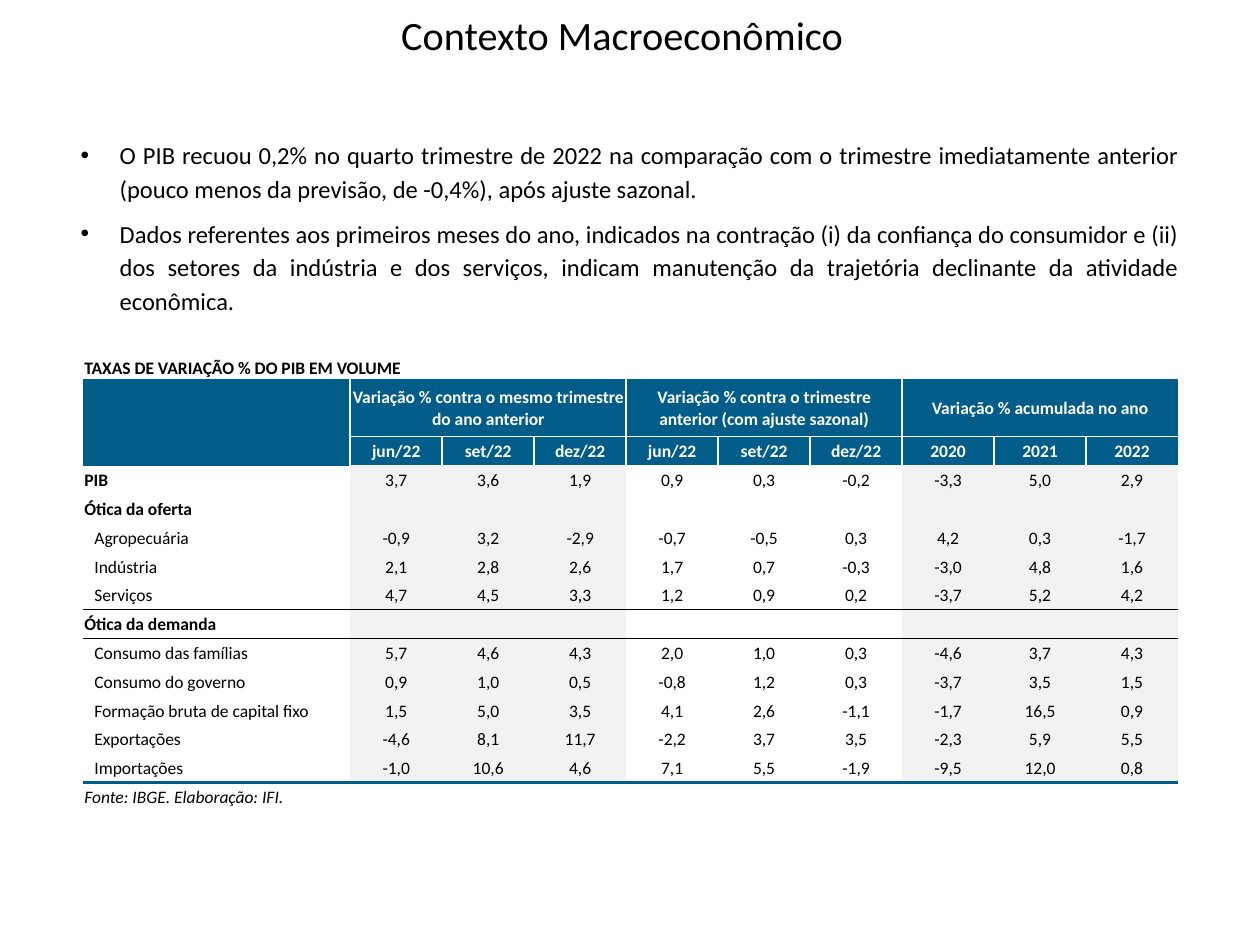
from dataclasses import dataclass

from lxml.etree import SubElement
from pptx import Presentation
from pptx.dml.color import RGBColor
from pptx.enum.text import MSO_ANCHOR, MSO_AUTO_SIZE, PP_ALIGN
from pptx.oxml.ns import qn
from pptx.util import Inches, Pt


@dataclass(frozen=True)
class Theme:
    font: str = "Calibri"
    black: str = "000000"
    white: str = "FFFFFF"
    blue: str = "005D89"
    gray: str = "F2F2F2"
    title_size: float = 23
    body_size: float = 14
    table_size: float = 10


THEME = Theme()

# Content
TITLE = "Contexto Macroeconômico"
BULLETS = [
    "O PIB recuou 0,2% no quarto trimestre de 2022 na comparação com o trimestre "
    "imediatamente anterior (pouco menos da previsão, de -0,4%), após ajuste sazonal.",
    "Dados referentes aos primeiros meses do ano, indicados na contração (i) da confiança "
    "do consumidor e (ii) dos setores da indústria e dos serviços, indicam manutenção da "
    "trajetória declinante da atividade econômica.",
]
TABLE_TITLE = "TAXAS DE VARIAÇÃO % DO PIB EM VOLUME"
QUARTERS = ["jun/22", "set/22", "dez/22"]
GROUPS = [
    ("Variação % contra o mesmo trimestre do ano anterior", QUARTERS),
    ("Variação % contra o trimestre anterior (com ajuste sazonal)", QUARTERS),
    ("Variação % acumulada no ano", ["2020", "2021", "2022"]),
]
SECTIONS = [
    ("PIB", "3,7 3,6 1,9 0,9 0,3 -0,2 -3,3 5,0 2,9", []),
    ("Ótica da oferta", "", [
        ("Agropecuária", "-0,9 3,2 -2,9 -0,7 -0,5 0,3 4,2 0,3 -1,7"),
        ("Indústria", "2,1 2,8 2,6 1,7 0,7 -0,3 -3,0 4,8 1,6"),
        ("Serviços", "4,7 4,5 3,3 1,2 0,9 0,2 -3,7 5,2 4,2"),
    ]),
    ("Ótica da demanda", "", [
        ("Consumo das famílias", "5,7 4,6 4,3 2,0 1,0 0,3 -4,6 3,7 4,3"),
        ("Consumo do governo", "0,9 1,0 0,5 -0,8 1,2 0,3 -3,7 3,5 1,5"),
        ("Formação bruta de capital fixo", "1,5 5,0 3,5 4,1 2,6 -1,1 -1,7 16,5 0,9"),
        ("Exportações", "-4,6 8,1 11,7 -2,2 3,7 3,5 -2,3 5,9 5,5"),
        ("Importações", "-1,0 10,6 4,6 7,1 5,5 -1,9 -9,5 12,0 0,8"),
    ]),
]
SOURCE = "Fonte: IBGE. Elaboração: IFI."

# Grid
GROUP_SIZE = 3
VALUE_COLUMNS = GROUP_SIZE * len(GROUPS)
HEADER_ROWS = 4
ROWS = HEADER_ROWS + sum(1 + len(items) for _, _, items in SECTIONS) + 1
TABLE_LEFT, TABLE_TOP, TABLE_WIDTH, TABLE_HEIGHT = 0.66, 2.78, 8.69, 3.66
LABEL_WIDTH = 2.12
NO_STYLE = "{2D5ABB26-0587-4C30-8999-92F81FD0307C}"


def place(shape, left, top, width, height):
    shape.left, shape.top = Inches(left), Inches(top)
    shape.width, shape.height = Inches(width), Inches(height)


def set_font(paragraph, size, color=THEME.black, bold=False, italic=False):
    font = paragraph.font
    font.name, font.size = THEME.font, Pt(size)
    font.bold, font.italic = bold, italic
    font.color.rgb = RGBColor.from_string(color)


def add_title(slide):
    title = slide.shapes.title
    place(title, 2.96, 0, 3.96, 0.59)
    frame = title.text_frame
    frame.text = TITLE
    frame.vertical_anchor = MSO_ANCHOR.MIDDLE
    paragraph = frame.paragraphs[0]
    paragraph.alignment, paragraph.line_spacing = PP_ALIGN.CENTER, 0.9
    set_font(paragraph, THEME.title_size)


def add_bullets(slide):
    body = slide.placeholders[1]
    place(body, 0.54, 1.03, 8.92, 1.54)
    frame = body.text_frame
    frame.text = "\n".join(BULLETS)
    frame.auto_size = MSO_AUTO_SIZE.NONE
    for paragraph in frame.paragraphs:
        paragraph.alignment, paragraph.line_spacing = PP_ALIGN.JUSTIFY, 1.15
        paragraph.space_before, paragraph.space_after = Pt(0), Pt(6)
        properties = paragraph._p.get_or_add_pPr()
        properties.set("marL", str(Inches(0.31)))
        properties.set("indent", str(-Inches(0.31)))
        SubElement(properties, qn("a:buFont"), typeface="Arial")
        SubElement(properties, qn("a:buChar"), char="•")
        set_font(paragraph, THEME.body_size)


def set_borders(cell, borders):
    """Draw borders given as {side: (color, points)}, sides being L, R, T and B."""
    properties = cell._tc.get_or_add_tcPr()
    for side in "LRTB":
        if side in borders:
            color, points = borders[side]
            line = SubElement(properties, qn(f"a:ln{side}"), w=str(Pt(points)))
            SubElement(SubElement(line, qn("a:solidFill")), qn("a:srgbClr"), val=color)


def fill_cell(cell, text="", fill=THEME.white, color=THEME.black, align=PP_ALIGN.CENTER,
              bold=False, italic=False, indent=0.01, borders=None):
    cell.text = text
    cell.margin_left, cell.margin_right = Inches(indent), Inches(0.01)
    cell.margin_top, cell.margin_bottom = Inches(0.01), 0
    cell.vertical_anchor = MSO_ANCHOR.MIDDLE
    set_borders(cell, borders or {})
    cell.fill.solid()
    cell.fill.fore_color.rgb = RGBColor.from_string(fill)
    paragraph = cell.text_frame.paragraphs[0]
    paragraph.alignment = align
    set_font(paragraph, THEME.table_size, color, bold, italic)
    if not text:  # an empty line takes its height from its end mark
        SubElement(paragraph._p, qn("a:endParaRPr"), sz=str(THEME.table_size * 100))


def add_header(table):
    title = table.cell(0, 0)
    title.merge(table.cell(0, VALUE_COLUMNS))
    fill_cell(title, TABLE_TITLE, align=PP_ALIGN.LEFT, bold=True)
    title.vertical_anchor = MSO_ANCHOR.BOTTOM

    rule = (THEME.white, 1)
    style = dict(fill=THEME.blue, color=THEME.white, bold=True)
    for row in range(1, HEADER_ROWS):
        fill_cell(table.cell(row, 0), borders={"R": rule}, **style)
    for group, (heading, periods) in enumerate(GROUPS):
        first = 1 + group * GROUP_SIZE
        cell = table.cell(1, first)
        cell.merge(table.cell(2, first + GROUP_SIZE - 1))
        inner = {} if group == len(GROUPS) - 1 else {"R": rule}
        fill_cell(cell, heading, borders={"L": rule, "B": rule, **inner}, **style)
        for column, period in enumerate(periods, first):
            inner = {} if column == VALUE_COLUMNS else {"R": rule}
            fill_cell(table.cell(3, column), period,
                      borders={"L": rule, "T": rule, **inner}, **style)


def add_data(table):
    lines = []
    for label, values, items in SECTIONS:
        lines.append((label, values, True))
        lines += [(name, numbers, False) for name, numbers in items]
    last_row = ROWS - 2
    demand_row = last_row - len(SECTIONS[-1][2])
    borders = {
        demand_row - 1: {"B": (THEME.black, 1)},
        demand_row: {"T": (THEME.black, 1)},
        last_row: {"B": (THEME.blue, 1.5)},
    }
    for row, (label, values, is_section) in enumerate(lines, HEADER_ROWS):
        fill_cell(table.cell(row, 0), label, align=PP_ALIGN.LEFT, bold=is_section,
                  indent=0.01 if is_section else 0.09, borders=borders.get(row))
        numbers = values.split() or [""] * VALUE_COLUMNS
        for column, number in enumerate(numbers):
            shaded = column // GROUP_SIZE % 2 == 0
            fill_cell(table.cell(row, column + 1), number, borders=borders.get(row),
                      fill=THEME.gray if shaded else THEME.white)

    for column in range(VALUE_COLUMNS + 1):
        fill_cell(table.cell(ROWS - 1, column), "" if column else SOURCE,
                  align=PP_ALIGN.JUSTIFY, italic=True, borders={"T": (THEME.blue, 1.5)})


def add_rates_table(slide):
    frame = slide.shapes.add_table(
        ROWS, VALUE_COLUMNS + 1, Inches(TABLE_LEFT), Inches(TABLE_TOP),
        Inches(TABLE_WIDTH), Inches(TABLE_HEIGHT))
    table = frame.table
    table.first_row = table.horz_banding = False
    table._tbl.tblPr.find(qn("a:tableStyleId")).text = NO_STYLE
    value_width = (TABLE_WIDTH - LABEL_WIDTH) / VALUE_COLUMNS
    for index, column in enumerate(table.columns):
        column.width = Inches(value_width if index else LABEL_WIDTH)
    add_header(table)
    add_data(table)


def main():
    presentation = Presentation()
    presentation.slide_width, presentation.slide_height = Inches(10), Inches(7.5)
    slide = presentation.slides.add_slide(presentation.slide_layouts[1])
    add_title(slide)
    add_bullets(slide)
    add_rates_table(slide)
    presentation.save("out.pptx")


if __name__ == "__main__":
    main()
